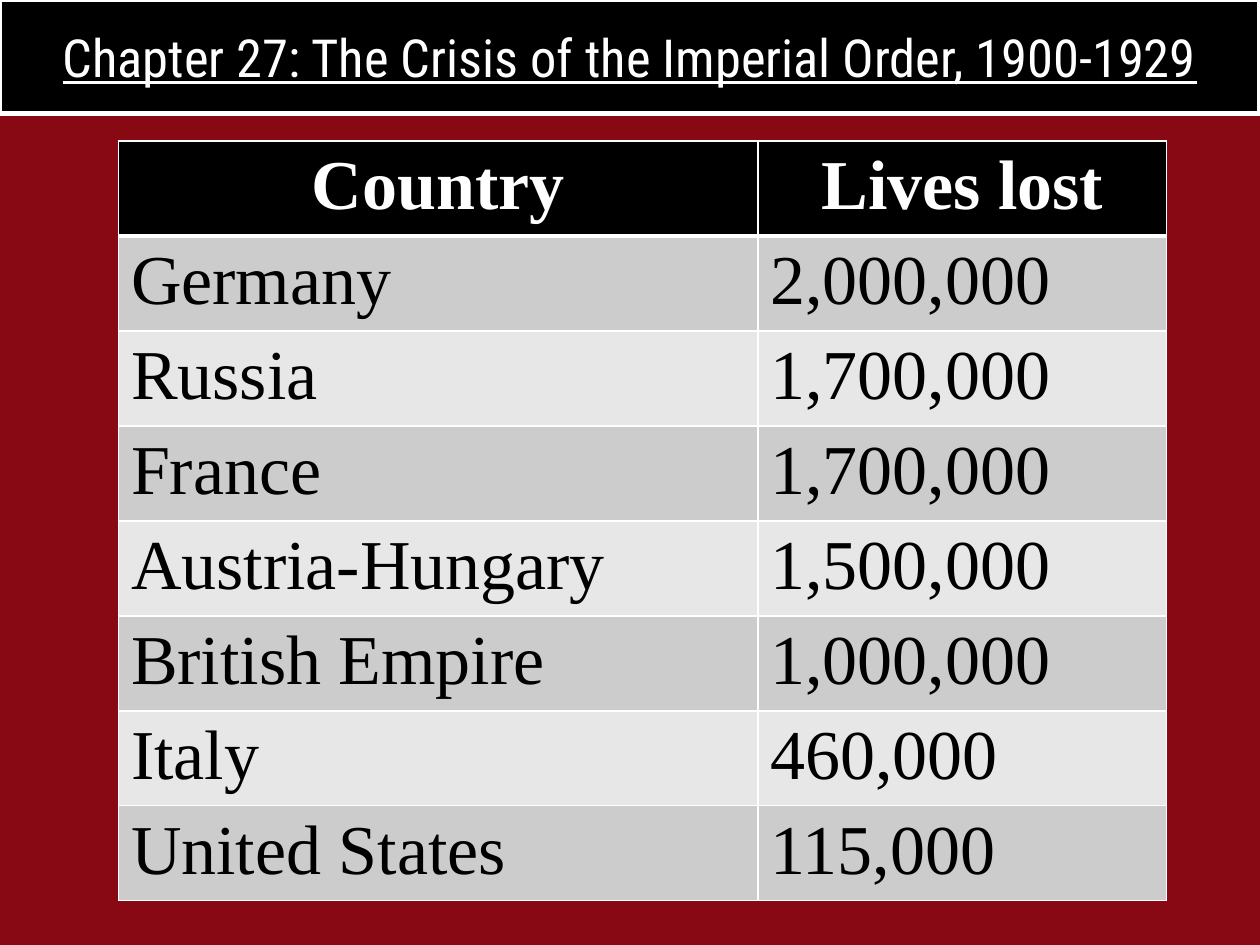
from dataclasses import dataclass

from lxml.etree import SubElement
from pptx import Presentation
from pptx.dml.color import RGBColor
from pptx.enum.shapes import MSO_SHAPE
from pptx.enum.text import MSO_ANCHOR, PP_ALIGN
from pptx.oxml.ns import qn
from pptx.util import Inches, Pt


@dataclass(frozen=True)
class Theme:
    background: str = "880814"
    dark: str = "000000"
    light: str = "FFFFFF"
    bands: tuple = ("CCCCCC", "E7E7E7")
    title_font: str = "Roboto Condensed"
    table_font: str = "Times New Roman"
    title_size: int = 30
    table_size: int = 40
    title_line: float = 2.75
    border: int = 1
    header_rule: int = 3


THEME = Theme()
WIDTH, HEIGHT = Inches(10), Inches(7.5)
TITLE = "Chapter 27: The Crisis of the Imperial Order, 1900-1929"
LOSSES = [
    ("Country", "Lives lost"),
    ("Germany", "2,000,000"),
    ("Russia", "1,700,000"),
    ("France", "1,700,000"),
    ("Austria-Hungary", "1,500,000"),
    ("British Empire", "1,000,000"),
    ("Italy", "460,000"),
    ("United States", "115,000"),
]
COLUMN_SHARES = (0.61, 0.39)


def fill_with(fill, color):
    fill.solid()
    fill.fore_color.rgb = RGBColor.from_string(color)


def write(frame, text, align, color, **formats):
    para = frame.paragraphs[0]
    para.alignment = align
    span = para.add_run()
    span.text = text
    for name, value in formats.items():
        setattr(span.font, name, value)
    span.font.color.rgb = RGBColor.from_string(color)


def add_borders(cell, widths):
    properties = cell._tc.get_or_add_tcPr()
    for side, width in widths.items():
        line = SubElement(properties, qn(f"a:ln{side}"), w=str(Pt(width)))
        color = SubElement(line, qn("a:solidFill"))
        SubElement(color, qn("a:srgbClr"), val=THEME.light)


def add_title(page, box):
    banner = page.shapes.add_shape(MSO_SHAPE.RECTANGLE, *box)
    banner.shadow.inherit = False
    fill_with(banner.fill, THEME.dark)
    fill_with(banner.line.fill, THEME.light)
    banner.line.width = Pt(THEME.title_line)
    frame = banner.text_frame
    frame.word_wrap = True
    frame.vertical_anchor = MSO_ANCHOR.MIDDLE
    write(frame, TITLE, PP_ALIGN.CENTER, THEME.light, name=THEME.title_font,
          size=Pt(THEME.title_size), underline=True)


def add_losses(page, box):
    table = page.shapes.add_table(len(LOSSES), len(COLUMN_SHARES), *box).table
    for column, share in zip(table.columns, COLUMN_SHARES):
        column.width = int(box[2] * share)
    for row, values in enumerate(LOSSES):
        header = row == 0
        fill = THEME.dark if header else THEME.bands[(row - 1) % 2]
        color = THEME.light if header else THEME.dark
        align = PP_ALIGN.CENTER if header else PP_ALIGN.LEFT
        top = THEME.header_rule if row == 1 else THEME.border
        bottom = THEME.header_rule if header else THEME.border
        for column, value in enumerate(values):
            cell = table.cell(row, column)
            add_borders(cell, {"L": THEME.border, "R": THEME.border, "T": top, "B": bottom})
            fill_with(cell.fill, fill)
            write(cell.text_frame, value, align, color, name=THEME.table_font,
                  size=Pt(THEME.table_size), bold=header)


def share_box(left, top, width, height):
    return int(WIDTH * left), int(HEIGHT * top), int(WIDTH * width), int(HEIGHT * height)


def main():
    deck = Presentation()
    deck.slide_width, deck.slide_height = WIDTH, HEIGHT
    page = deck.slides.add_slide(deck.slide_layouts[6])
    fill_with(page.background.fill, THEME.background)
    add_title(page, share_box(0, 0, 1, 0.12))
    add_losses(page, (Inches(0.94), Inches(1.12), Inches(8.32), Inches(6.03)))
    deck.save("out.pptx")


if __name__ == "__main__":
    main()
